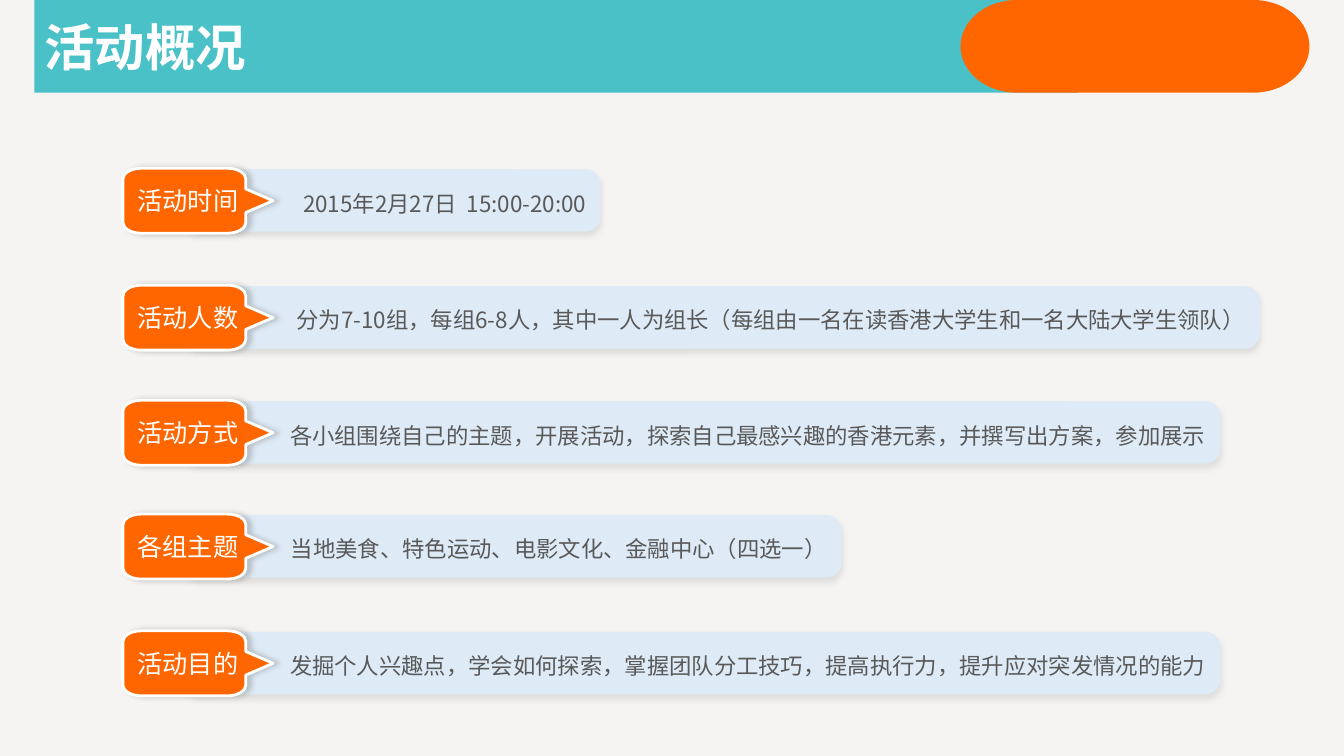
import lxml.etree
import pptx
import pptx.dml.color
import pptx.enum.shapes
import pptx.enum.text
import pptx.oxml.ns
import pptx.util

Pt = pptx.util.Pt
RGBColor = pptx.dml.color.RGBColor
MSO_SHAPE = pptx.enum.shapes.MSO_SHAPE
PP_ALIGN = pptx.enum.text.PP_ALIGN
qn = pptx.oxml.ns.qn

PAPER = RGBColor(0xF5, 0xF4, 0xF2)
TEAL = RGBColor(0x4A, 0xC1, 0xC7)
ORANGE = RGBColor(0xFF, 0x66, 0x00)
PALE_BLUE = RGBColor(0xDE, 0xEB, 0xF7)
GREY = RGBColor(0x59, 0x59, 0x59)
WHITE = RGBColor(0xFF, 0xFF, 0xFF)
BAR_SHADOW = RGBColor(0xBF, 0xBF, 0xBF)
TAG_SHADOW = RGBColor(0x80, 0x80, 0x80)

FONT = "Noto Sans CJK SC"
TITLE_FONT = {"name": FONT, "size": Pt(36), "bold": True}
TAG_FONT = {"name": FONT, "size": Pt(18)}
BAR_FONT = {"name": FONT, "size": Pt(16)}
TAG_FRAME = {"margin_left": 0, "margin_right": Pt(14.4), "word_wrap": True}
BAR_FRAME = {"margin_left": 0, "margin_right": Pt(7.2), "word_wrap": True}
TITLE_FRAME = {"word_wrap": True, "auto_size": pptx.enum.text.MSO_AUTO_SIZE.NONE}

# Top, label, detail, and width of the detail bar
ROWS = [
    (120.2, "活动时间", "2015年2月27日  15:00-20:00", 296.6),
    (203.7, "活动人数", "分为7-10组，每组6-8人，其中一人为组长（每组由一名在读香港大学生和一名大陆大学生领队）", 767.5),
    (285.9, "活动方式", "各小组围绕自己的主题，开展活动，探索自己最感兴趣的香港元素，并撰写出方案，参加展示", 739.4),
    (367.2, "各组主题", "当地美食、特色运动、电影文化、金融中心（四选一）", 468.7),
    (450.6, "活动目的", "发掘个人兴趣点，学会如何探索，掌握团队分工技巧，提高执行力，提升应对突发情况的能力", 739.4),
]


def apply(target, values):
    for name, value in values.items():
        setattr(target, name, value)


def write(shape, text, frame_values, font_values, color, para_values):
    frame = shape.text_frame
    apply(frame, frame_values)
    frame.vertical_anchor = pptx.enum.text.MSO_ANCHOR.MIDDLE
    para = frame.paragraphs[0]
    apply(para, para_values)
    span = para.add_run()
    span.text = text
    apply(span.font, font_values)
    span.font.color.rgb = color
    east_asian = lxml.etree.SubElement(span.font._element, qn("a:ea"))
    east_asian.set("typeface", FONT)


def paint(shape, color):
    shape.fill.solid()
    shape.fill.fore_color.rgb = color
    shape.line.fill.background()


def cast_shadow(shape, color, degrees):
    shape.shadow.inherit = False
    effects = shape._element.spPr.find(qn("a:effectLst"))
    shadow = lxml.etree.SubElement(effects, qn("a:outerShdw"), {
        "blurRad": str(Pt(4)), "dist": str(Pt(3)),
        "dir": str(degrees * 60000), "algn": "ctr", "rotWithShape": "0"})
    tint = lxml.etree.SubElement(shadow, qn("a:srgbClr"), val=str(color))
    lxml.etree.SubElement(tint, qn("a:alpha"), val="40000")


def add_header(page, left, top, width, height):
    # Title band
    title = page.shapes.title
    apply(title, {"left": Pt(left), "top": Pt(top),
                  "width": Pt(745.2), "height": Pt(height)})
    paint(title, TEAL)
    write(title, "活动概况", TITLE_FRAME, TITLE_FONT, WHITE,
          {"alignment": PP_ALIGN.LEFT})
    # Orange capsule at the right end
    capsule_width = 249.1
    capsule = page.shapes.add_shape(
        MSO_SHAPE.FLOWCHART_TERMINATOR, Pt(left + width - capsule_width), Pt(top),
        Pt(capsule_width), Pt(height))
    paint(capsule, ORANGE)
    capsule.shadow.inherit = False


def round_corners(shape, corner_steps):
    """Turn the slanted corner lines of an outline into quarter curves."""
    outline = shape._element.spPr.find(".//" + qn("a:path"))
    steps = [step for step in outline if step.tag != qn("a:close")]
    places = [(int(step[0].get("x")), int(step[0].get("y"))) for step in steps]
    for turn, index in enumerate(corner_steps):
        start, end = places[index - 1], places[index]
        # Corners are entered alternately from a level and an upright edge
        corner = (start[0], end[1]) if turn % 2 else (end[0], start[1])
        curve = lxml.etree.Element(qn("a:cubicBezTo"))
        controls = [tuple(round(a + 0.55 * (c - a)) for a, c in zip(place, corner))
                    for place in (start, end)]
        for x, y in controls + [end]:
            lxml.etree.SubElement(curve, qn("a:pt"), x=str(x), y=str(y))
        outline.replace(steps[index], curve)


def add_tag(page, left, top, width, height):
    """Rounded label with a pointer in the middle of its right side."""
    right, bottom = left + width - 19.5, top + height
    radius_x, radius_y = 13, 7.7
    middle, half_pointer = top + height / 2, 8.4
    near_x, far_x = left + radius_x, right - radius_x
    near_y, far_y = top + radius_y, bottom - radius_y
    points = [
        (far_x, top), (near_x, top), (left, near_y), (left, far_y),
        (near_x, bottom), (far_x, bottom), (right, far_y),
        (right, middle + half_pointer), (left + width, middle),
        (right, middle - half_pointer), (right, near_y), (far_x, top)]
    points = [(Pt(x), Pt(y)) for x, y in points]
    builder = page.shapes.build_freeform(*points[0])
    builder.add_line_segments(points[1:], close=True)
    tag = builder.convert_to_shape()
    round_corners(tag, (2, 4, 6, 11))
    return tag


def add_row(page, left, top, label, detail, bar_width):
    # Detail bar
    bar = page.shapes.add_shape(MSO_SHAPE.ROUNDED_RECTANGLE, Pt(left + 44.6),
                                Pt(top + 0.7), Pt(bar_width), Pt(44.6))
    bar.adjustments[0] = 0.24
    paint(bar, PALE_BLUE)
    cast_shadow(bar, BAR_SHADOW, 90)
    write(bar, detail, BAR_FRAME, BAR_FONT, GREY,
          {"alignment": PP_ALIGN.RIGHT, "line_spacing": 1.2})
    # Pointed label
    tag = add_tag(page, left, top, 107.3, 46.4)
    paint(tag, ORANGE)
    tag.line.color.rgb = WHITE
    tag.line.width = Pt(2)
    cast_shadow(tag, TAG_SHADOW, 0)
    write(tag, label, TAG_FRAME, TAG_FONT, WHITE, {"alignment": PP_ALIGN.CENTER})


def main():
    deck = pptx.Presentation()
    deck.slide_width, deck.slide_height = Pt(960), Pt(540)
    page = deck.slides.add_slide(deck.slide_layouts.get_by_name("Title Only"))
    page.background.fill.solid()
    page.background.fill.fore_color.rgb = PAPER
    add_header(page, 24.5, 0, 910.8, 66.2)
    for top, label, detail, bar_width in ROWS:
        add_row(page, 87.8, top, label, detail, bar_width)
    deck.save("out.pptx")


if __name__ == "__main__":
    main()
